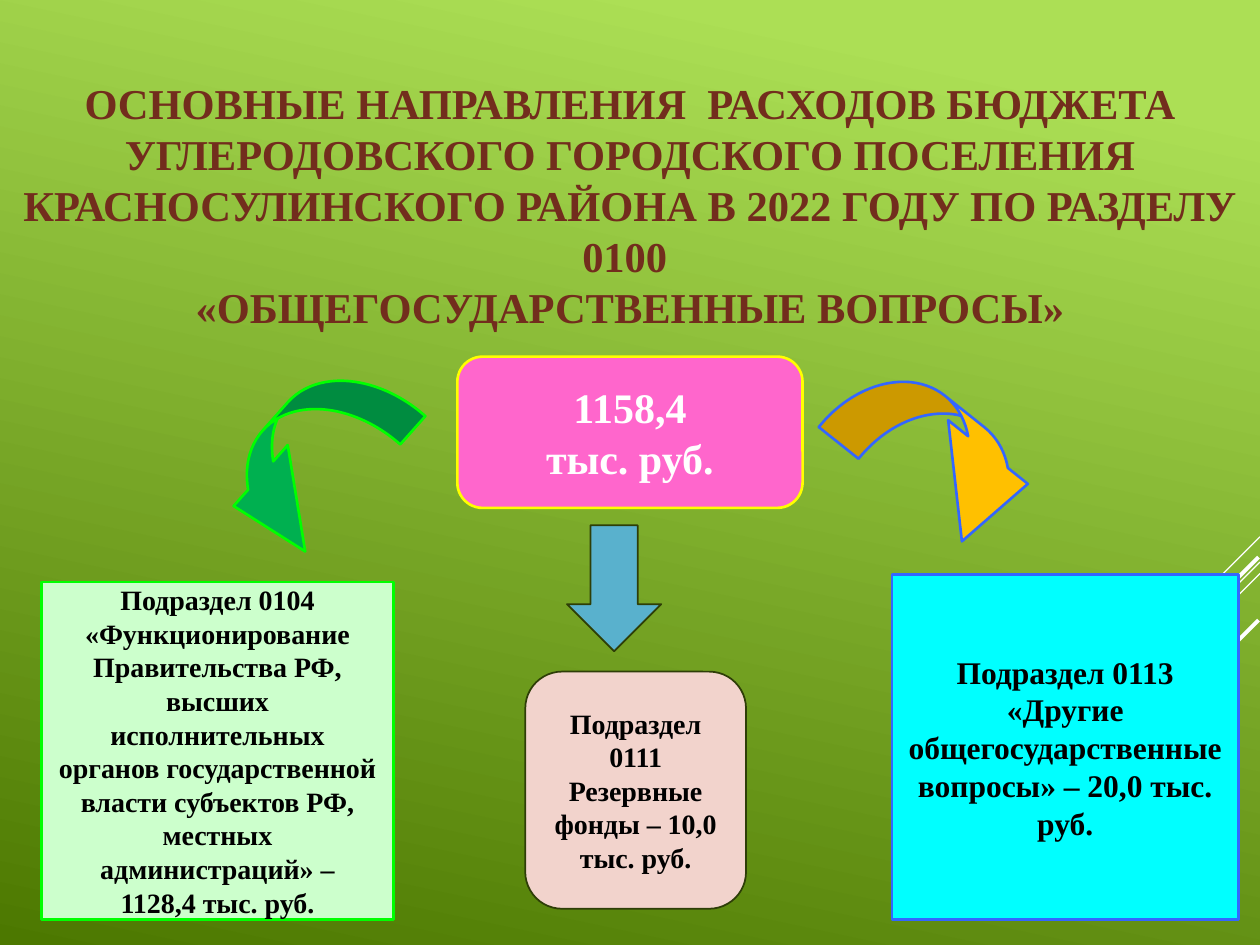
from dataclasses import dataclass

from pptx import Presentation
from pptx.dml.color import RGBColor
from pptx.enum.shapes import MSO_CONNECTOR, MSO_SHAPE
from pptx.enum.text import MSO_ANCHOR, PP_ALIGN
from pptx.oxml.ns import qn
from pptx.util import Cm, Pt
from lxml import etree

RECT = MSO_SHAPE.RECTANGLE
ROUNDED = MSO_SHAPE.ROUNDED_RECTANGLE
DOWN_ARROW = MSO_SHAPE.DOWN_ARROW
CURVED_DOWN = MSO_SHAPE.CURVED_DOWN_ARROW
CURVED_UP = MSO_SHAPE.CURVED_UP_ARROW
STRAIGHT = MSO_CONNECTOR.STRAIGHT
MIDDLE = MSO_ANCHOR.MIDDLE
CENTER = PP_ALIGN.CENTER


@dataclass(frozen=True)
class Theme:
    font: str = "Times New Roman"
    title_size: float = 24.3
    total_size: float = 24
    large_size: float = 18
    body_size: float = 16
    light_green: str = "ACDF55"
    dark_green: str = "4C7800"
    brown: str = "722D1D"
    white: str = "FFFFFF"
    black: str = "000000"
    pink: str = "FF66CC"
    yellow: str = "FFFF00"
    mint: str = "CCFFCC"
    lime: str = "00FF00"
    cyan: str = "00FFFF"
    blue: str = "3366FF"
    amber: str = "FFC000"
    green: str = "00B050"
    steel: str = "59B1CD"
    olive: str = "2E3E07"
    rose: str = "F2D3CC"


theme = Theme()


def write(shape, lines, size, color, inset_x, inset_y):
    frame = shape.text_frame
    frame.text = "\n".join(lines)
    frame.word_wrap = True
    frame.vertical_anchor = MIDDLE
    frame.margin_left = frame.margin_right = Cm(inset_x)
    frame.margin_top = frame.margin_bottom = Cm(inset_y)
    for paragraph in frame.paragraphs:
        paragraph.alignment = CENTER
        paragraph.font.name = theme.font
        paragraph.font.size = Pt(size)
        paragraph.font.bold = True
        paragraph.font.color.rgb = RGBColor.from_string(color)


def add_block(kind, box, fill, line, line_width, adjustments=(), rotation=0):
    block = slide.shapes.add_shape(kind, *[Cm(length) for length in box])
    block.shadow.inherit = False
    block.fill.solid()
    block.fill.fore_color.rgb = RGBColor.from_string(fill)
    block.line.color.rgb = RGBColor.from_string(line)
    block.line.width = Pt(line_width)
    for index, value in enumerate(adjustments):
        block.adjustments[index] = value
    block.rotation = rotation
    return block


presentation = Presentation()
presentation.slide_width, presentation.slide_height = Cm(25.4), Cm(19.05)
slide = presentation.slides.add_slide(presentation.slide_layouts[5])

# Background
background = slide.background.fill
background.gradient()
background.gradient_angle = 258
stops = ((0.1, theme.light_green), (1, theme.dark_green))
for stop, (position, color) in zip(background.gradient_stops, stops):
    stop.position = position
    stop.color.rgb = RGBColor.from_string(color)

# Diagonal strokes at the right edge: start x, start y, run, width
strokes = (
    (25.4, 10.82, 2.11, 0.75),
    (25.4, 11.33, 6.87, 0.75),
    (25.4, 11.56, 4.37, 0.75),
    (25.37, 11.23, 3.98, 2.25),
    (25.37, 12.5, 2.89, 2.25),
)
for x, y, run, width in strokes:
    stroke = slide.shapes.add_connector(
        STRAIGHT, Cm(x), Cm(y), Cm(x - run), Cm(y + run))
    stroke.line.color.rgb = RGBColor.from_string(theme.white)
    stroke.line.width = Pt(width)
    etree.SubElement(stroke._element.spPr, qn("a:effectLst"))

# Title
title = slide.shapes.title
title.left, title.top, title.width, title.height = Cm(0), Cm(1.52), Cm(25.4), Cm(5.21)
heading = (
    "ОСНОВНЫЕ НАПРАВЛЕНИЯ  РАСХОДОВ БЮДЖЕТА УГЛЕРОДОВСКОГО ГОРОДСКОГО "
    "ПОСЕЛЕНИЯ КРАСНОСУЛИНСКОГО РАЙОНА В 2022 ГОДУ ПО РАЗДЕЛУ 0100 "
    "\v«ОБЩЕГОСУДАРСТВЕННЫЕ ВОПРОСЫ»"
)
write(title, [heading], theme.title_size, theme.brown, 0.25, 0)

# Total
total = add_block(ROUNDED, (9.22, 7.19, 6.96, 3.05),
                  theme.pink, theme.yellow, 1.5, [0.167])
write(total, ["1158,4", "тыс. руб."], theme.total_size, theme.white, 0.36, 0.13)

# Subsections
administration = add_block(RECT, (0.84, 11.73, 7.09, 6.81),
                           theme.mint, theme.lime, 1.5)
write(administration, [
    "Подраздел 0104",
    "«Функционирование Правительства РФ, высших исполнительных органов "
    "государственной власти субъектов РФ, местных администраций» –",
    "1128,4 тыс. руб.",
], theme.body_size, theme.black, 0.3, 0)

other_matters = add_block(RECT, (17.98, 11.58, 6.99, 6.96),
                          theme.cyan, theme.blue, 1.5)
write(other_matters, [
    "Подраздел 0113",
    "«Другие общегосударственные вопросы» – 20,0 тыс. руб.",
], theme.large_size, theme.black, 0.3, 0)

reserve_funds = add_block(ROUNDED, (10.59, 13.54, 4.45, 4.78),
                          theme.rose, theme.olive, 1)
write(reserve_funds, [
    "Подраздел 0111",
    "Резервные фонды – 10,0 тыс. руб.",
], theme.body_size, theme.black, 0.25, 0.13)

# Arrows from the total to the subsections
add_block(CURVED_DOWN, (16.64, 8.23, 4.72, 2.08),
          theme.amber, theme.blue, 1.5, [0.493, 0.988, 0.834], 38.6)
add_block(CURVED_UP, (4.01, 8.18, 4.47, 2.26),
          theme.green, theme.lime, 1.5, [0.338, 0.727, 0.747], 131.6)
add_block(DOWN_ARROW, (11.43, 10.59, 1.9, 2.54),
          theme.steel, theme.olive, 1)

presentation.save("out.pptx")
